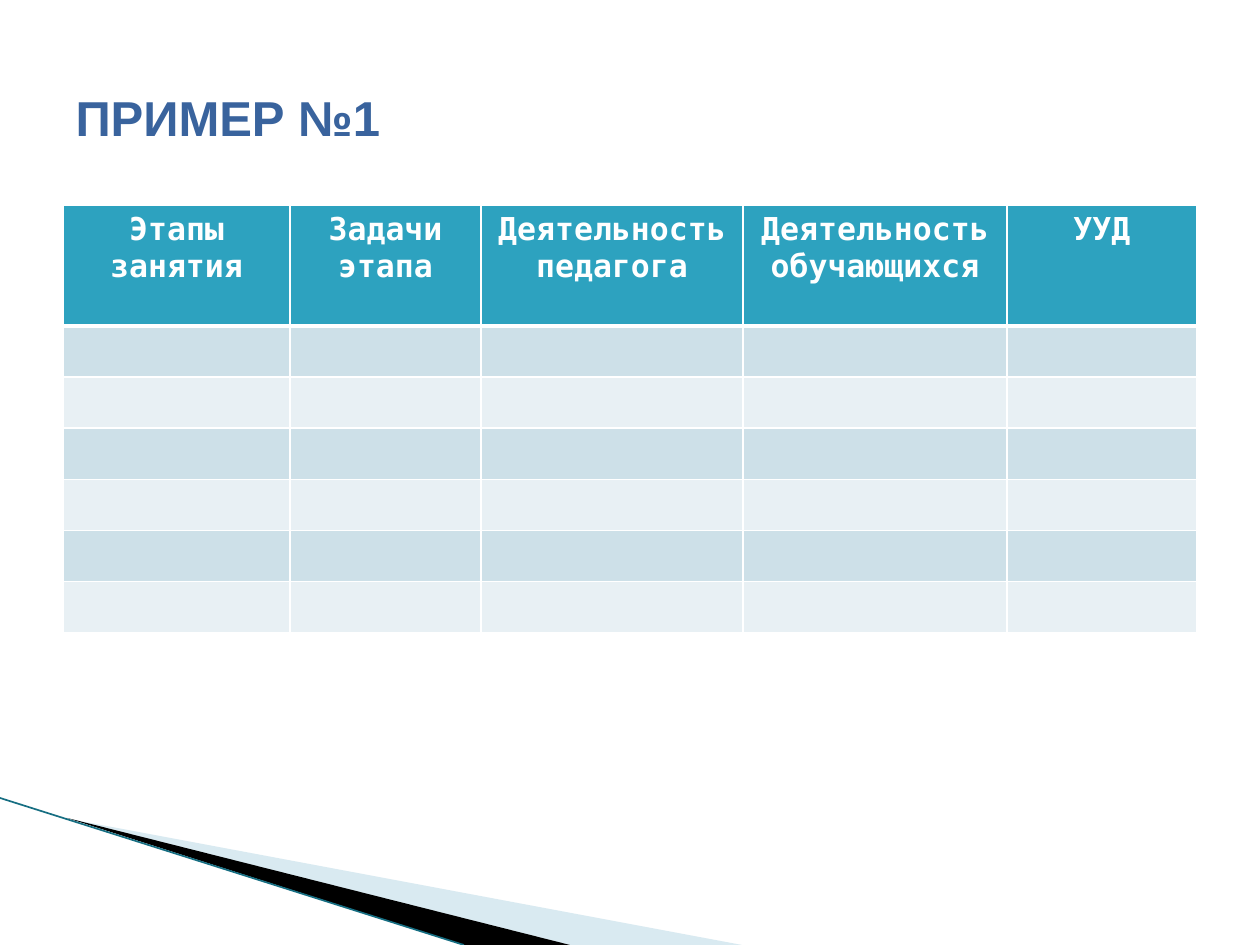
"""Build a lesson-plan table slide with a wedge decoration in the corner."""

from dataclasses import dataclass

import pptx
import pptx.dml.color
import pptx.enum.shapes
import pptx.enum.text
import pptx.oxml
import pptx.oxml.ns
import pptx.util

EMU_PER_PX = 914400 / 126


@dataclass(frozen=True)
class Theme:
    title_font: str = "Arial"
    table_font: str = "DejaVu Sans Mono"
    title_size: int = 28
    table_size: int = 18
    title: str = "39639D"
    header: str = "2DA2BF"
    bands: tuple[str, str] = ("CDE0E8", "E8F0F4")
    white: str = "FFFFFF"
    light_wedge: str = "A0CBDC"
    dark_wedge: str = "000000"
    edge: str = "166E82"


@dataclass(frozen=True)
class Wedge:
    points: tuple[tuple[int, int], ...]
    color: str
    opacity: int = 100


@dataclass(frozen=True)
class Column:
    heading: str
    width: int


THEME = Theme()
WEDGES = (
    Wedge(((69, 819), (742, 945), (570, 945)), THEME.light_wedge, 40),
    Wedge(((67, 818), (570, 945), (464, 945)), THEME.dark_wedge),
)
COLUMNS = (
    Column("Этапы занятия", 227),
    Column("Задачи этапа", 191),
    Column("Деятельность педагога", 262),
    Column("Деятельность обучающихся", 264),
    Column("УУД", 190),
)
HEADER_HEIGHT, ROW_HEIGHT, BODY_ROWS = 121, 51, 6


def px(length: int) -> pptx.util.Emu:
    return pptx.util.Emu(round(length * EMU_PER_PX))


def rgb(color: str) -> pptx.dml.color.RGBColor:
    return pptx.dml.color.RGBColor.from_string(color)


def style_font(font, name: str, size: int, color: str) -> None:
    font.name, font.size, font.bold = name, pptx.util.Pt(size), True
    font.color.rgb = rgb(color)


def draw_wedge(slide, wedge: Wedge) -> None:
    points = [(px(x), px(y)) for x, y in wedge.points]
    builder = slide.shapes.build_freeform(*points[0], scale=1.0)
    builder.add_line_segments(points[1:], close=True)
    shape = builder.convert_to_shape()
    shape.shadow.inherit = False
    shape.line.fill.background()
    shape.fill.solid()
    shape.fill.fore_color.rgb = rgb(wedge.color)
    if wedge.opacity < 100:
        color = shape._element.spPr.find(".//" + pptx.oxml.ns.qn("a:srgbClr"))
        color.append(pptx.oxml.parse_xml(
            f'<a:alpha {pptx.oxml.ns.nsdecls("a")} val="{wedge.opacity * 1000}"/>'))


def draw_edge(slide) -> None:
    connector = slide.shapes.add_connector(
        pptx.enum.shapes.MSO_CONNECTOR.STRAIGHT, px(0), px(798), px(464), px(945))
    connector.line.color.rgb = rgb(THEME.edge)
    connector.line.width = pptx.util.Pt(0.95)
    connector._element.spPr.append(
        pptx.oxml.parse_xml(f'<a:effectLst {pptx.oxml.ns.nsdecls("a")}/>'))


def style_cell(cell, color: str, top: int, bottom: int) -> None:
    properties = cell._tc.get_or_add_tcPr()
    for side, points in (("L", 1), ("R", 1), ("T", top), ("B", bottom)):
        properties.append(pptx.oxml.parse_xml(
            f'<a:ln{side} {pptx.oxml.ns.nsdecls("a")} w="{pptx.util.Pt(points)}">'
            f'<a:solidFill><a:srgbClr val="{THEME.white}"/></a:solidFill></a:ln{side}>'))
    cell.fill.solid()
    cell.fill.fore_color.rgb = rgb(color)


def draw_table(slide) -> None:
    width = sum(column.width for column in COLUMNS)
    height = HEADER_HEIGHT + BODY_ROWS * ROW_HEIGHT
    table = slide.shapes.add_table(
        BODY_ROWS + 1, len(COLUMNS), px(63), px(205), px(width), px(height)).table
    for index, row in enumerate(table.rows):
        row.height = px(ROW_HEIGHT if index else HEADER_HEIGHT)
        color = THEME.bands[(index - 1) % 2] if index else THEME.header
        for cell in row.cells:
            style_cell(cell, color, 3 if index == 1 else 1, 1 if index else 3)
    for index, column in enumerate(COLUMNS):
        table.columns[index].width = px(column.width)
        cell = table.cell(0, index)
        cell.text = column.heading
        paragraph = cell.text_frame.paragraphs[0]
        paragraph.alignment = pptx.enum.text.PP_ALIGN.CENTER
        style_font(paragraph.font, THEME.table_font, THEME.table_size, THEME.white)


def draw_title(slide, text: str) -> None:
    title = slide.shapes.title
    title.left, title.top, title.width, title.height = map(px, (63, 38, 1134, 158))
    title.text_frame.text = text
    title.text_frame.vertical_anchor = pptx.enum.text.MSO_ANCHOR.MIDDLE
    paragraph = title.text_frame.paragraphs[0]
    paragraph.alignment = pptx.enum.text.PP_ALIGN.LEFT
    style_font(paragraph.font, THEME.title_font, THEME.title_size, THEME.title)


def main() -> None:
    presentation = pptx.Presentation()
    presentation.slide_width, presentation.slide_height = px(1260), px(945)
    slide = presentation.slides.add_slide(presentation.slide_layouts[5])
    for wedge in WEDGES:
        draw_wedge(slide, wedge)
    draw_edge(slide)
    draw_table(slide)
    draw_title(slide, "ПРИМЕР №1")
    presentation.save("out.pptx")


if __name__ == "__main__":
    main()
